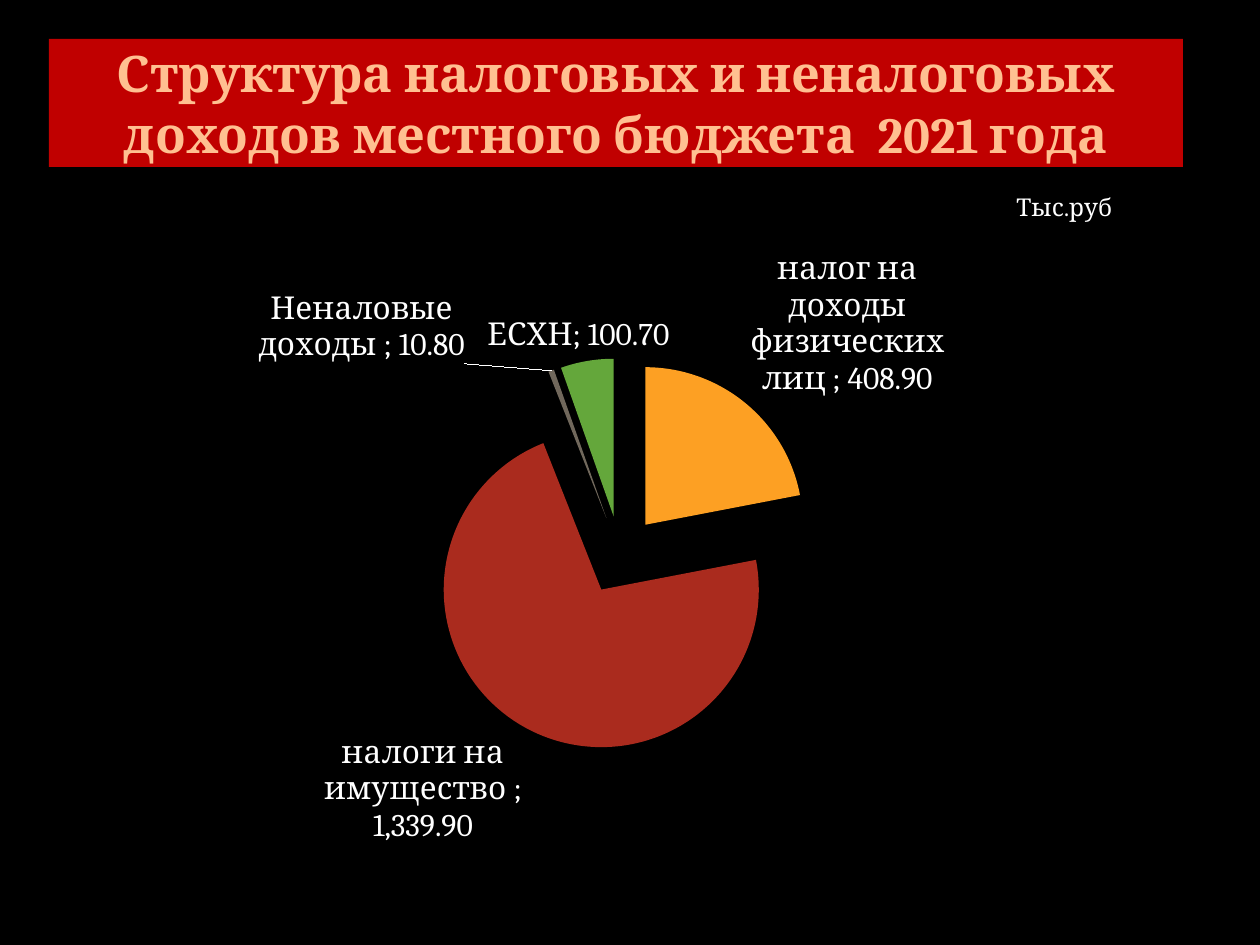
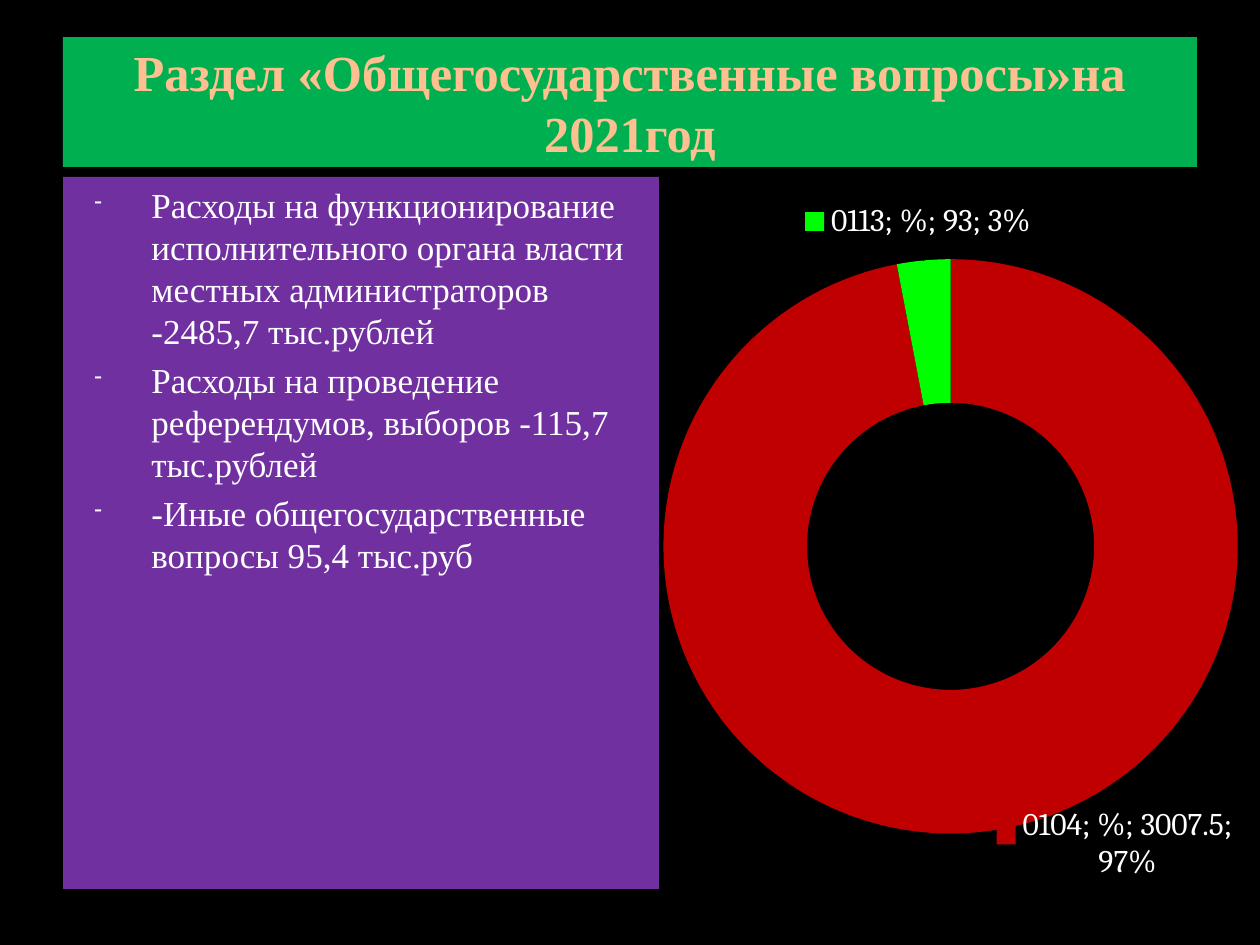
from lxml import etree
from pptx import Presentation
from pptx.chart.data import CategoryChartData
from pptx.dml.color import RGBColor
from pptx.enum.chart import XL_CHART_TYPE, XL_LABEL_POSITION
from pptx.enum.shapes import MSO_SHAPE
from pptx.enum.text import MSO_ANCHOR, PP_ALIGN
from pptx.oxml import parse_xml
from pptx.oxml.ns import nsdecls, qn
from pptx.util import Pt

PX = 914400 / 126  # one px in EMU
BLACK = RGBColor(0x00, 0x00, 0x00)
WHITE = RGBColor(0xFF, 0xFF, 0xFF)
PEACH = RGBColor(0xFF, 0xC0, 0x91)
RED = RGBColor(0xC0, 0x00, 0x00)
GREEN = RGBColor(0x00, 0xB0, 0x50)
PURPLE = RGBColor(0x70, 0x30, 0xA0)
ORANGE = RGBColor(0xFD, 0xA0, 0x23)
BRICK = RGBColor(0xAA, 0x2B, 0x1E)
TAUPE = RGBColor(0x71, 0x68, 0x5C)
LEAF = RGBColor(0x64, 0xA7, 0x3B)
LIME = RGBColor(0x00, 0xFF, 0x00)
SERIF, TIMES = "Cambria", "Times New Roman"

TITLE = {"size": Pt(28.8), "bold": True}
BODY = {"size": Pt(20), "name": TIMES}
NOTE = {"size": Pt(14), "name": SERIF}
LABEL = {"size": Pt(18), "name": SERIF}


def style(font, look, color):
    for key, value in look.items():
        setattr(font, key, value)
    font.color.rgb = color


def box(n):
    return [round(v * PX) for v in n]


deck = Presentation()
deck.slide_width, deck.slide_height = box((1260, 945))

# Shared frame of both slides: background, title band, chart
FRAMES = [
    {"title": "Структура налоговых и неналоговых доходов местного бюджета  2021 года",
     "band": (49, 39, 1134, 128), "fill": RED, "face": SERIF,
     "kind": XL_CHART_TYPE.PIE, "area": (63, 220, 1134, 649), "name": "Series 1",
     "data": [("налог на доходы физических лиц ", 408.9, ORANGE),
              ("налоги на имущество ", 1339.9, BRICK),
              ("Неналовые доходы ", 10.8, TAUPE),
              ("ЕСХН", 100.7, LEAF)],
     "show": {"show_value": True, "show_category_name": True,
              "number_format": "#,##0.00", "number_format_is_linked": False,
              "position": XL_LABEL_POSITION.BEST_FIT}},
    {"title": "Раздел «Общегосударственные вопросы»на 2021год",
     "band": (63, 37, 1134, 130), "fill": GREEN, "face": TIMES,
     "kind": XL_CHART_TYPE.DOUGHNUT, "area": (635, 197, 625, 692), "name": "%",
     "data": [("0104", 3007.5, RED), ("0113", 93, LIME)],
     "show": {"show_value": True, "show_category_name": True,
              "show_series_name": True, "show_percentage": True,
              "show_legend_key": True}},
]
slides, charts = [], []
for frame in FRAMES:
    slide = deck.slides.add_slide(deck.slide_layouts[6])
    slide.background.fill.solid()
    slide.background.fill.fore_color.rgb = BLACK

    band = slide.shapes.add_shape(MSO_SHAPE.RECTANGLE, *box(frame["band"]))
    band.shadow.inherit = False
    band.fill.solid()
    band.fill.fore_color.rgb = frame["fill"]
    band.line.fill.background()
    band.text_frame.vertical_anchor = MSO_ANCHOR.MIDDLE
    head = band.text_frame.paragraphs[0]
    head.alignment = PP_ALIGN.CENTER
    run = head.add_run()
    run.text = frame["title"]
    style(run.font, TITLE | {"name": frame["face"]}, PEACH)

    data = CategoryChartData()
    data.categories = [name for name, _, _ in frame["data"]]
    data.add_series(frame["name"], [value for _, value, _ in frame["data"]])
    chart = slide.shapes.add_chart(frame["kind"], *box(frame["area"]), data).chart
    chart.has_title = chart.has_legend = False
    style(chart.font, LABEL, WHITE)
    chart.plots[0].vary_by_categories = True
    series = chart.plots[0].series[0]
    for i, (_, _, color) in enumerate(frame["data"]):
        fill = series.points[i].format.fill
        fill.solid()
        fill.fore_color.rgb = color
    labels = series.data_labels
    for key, value in frame["show"].items():
        setattr(labels, key, value)
    style(labels.font, LABEL, WHITE)
    slides.append(slide)
    charts.append(chart)

# Pie: slices pulled apart
first = next(charts[0].element.iter(qn("c:dPt")))
first.addprevious(parse_xml(f'<c:explosion {nsdecls("c")} val="25"/>'))

# Unit of the pie values
note = slides[0].shapes.add_textbox(*box((1004, 186, 168, 43))).text_frame
note.word_wrap = True
run = note.paragraphs[0].add_run()
run.text = "Тыс.руб"
style(run.font, NOTE, WHITE)

# Ring: fixed plot area and labels moved off the ring
plot = next(charts[1].element.iter(qn("c:plotArea")))
for old in plot.findall(qn("c:layout")):
    plot.remove(old)
plot.insert(0, parse_xml(
    f'<c:layout {nsdecls("c")}><c:manualLayout><c:layoutTarget val="inner"/>'
    '<c:xMode val="edge"/><c:yMode val="edge"/><c:x val="0.01"/><c:y val="0.09"/>'
    '<c:w val="0.99"/><c:h val="0.83"/></c:manualLayout></c:layout>'))
group = next(charts[1].element.iter(qn("c:dLbls")))
SHOWN = ("LegendKey", "Val", "CatName", "SerName", "Percent")
for i, (x, y) in enumerate([(0.23, 0.12), (-0.02, -0.16)]):
    label = parse_xml(
        f'<c:dLbl {nsdecls("c")}><c:idx val="{i}"/><c:layout><c:manualLayout>'
        f'<c:x val="{x}"/><c:y val="{y}"/></c:manualLayout></c:layout></c:dLbl>')
    for part in SHOWN:
        etree.SubElement(label, qn(f"c:show{part}")).set("val", "1")
    etree.SubElement(label, qn("c:showBubbleSize")).set("val", "0")
    etree.SubElement(label, qn("c:separator")).text = "; "
    group.insert(i, label)

# Expense list beside the ring
panel = slides[1].shapes.add_shape(MSO_SHAPE.RECTANGLE, *box((63, 177, 596, 712)))
panel.shadow.inherit = False
panel.fill.solid()
panel.fill.fore_color.rgb = PURPLE
panel.line.fill.background()
text = panel.text_frame
text.vertical_anchor = MSO_ANCHOR.TOP
ITEMS = [
    "Расходы на функционирование исполнительного органа власти местных администраторов -2485,7 тыс.рублей",
    "Расходы на проведение референдумов, выборов -115,7 тыс.рублей",
    "-Иные общегосударственные вопросы 95,4 тыс.руб",
]
left, hang = box((76, -57))
for i, item in enumerate(ITEMS):
    para = text.add_paragraph() if i else text.paragraphs[0]
    para.alignment = PP_ALIGN.LEFT
    para.space_before = Pt(4)
    run = para.add_run()
    run.text = item
    style(run.font, BODY, WHITE)
    props = para._p.get_or_add_pPr()
    props.set("marL", str(left))
    props.set("indent", str(hang))
    for bullet in ('<a:buClr {}><a:srgbClr val="F9F9F9"/></a:buClr>',
                   '<a:buSzPct {} val="65000"/>',
                   '<a:buChar {} char="-"/>'):
        props.append(parse_xml(bullet.format(nsdecls("a"))))

deck.save("out.pptx")
